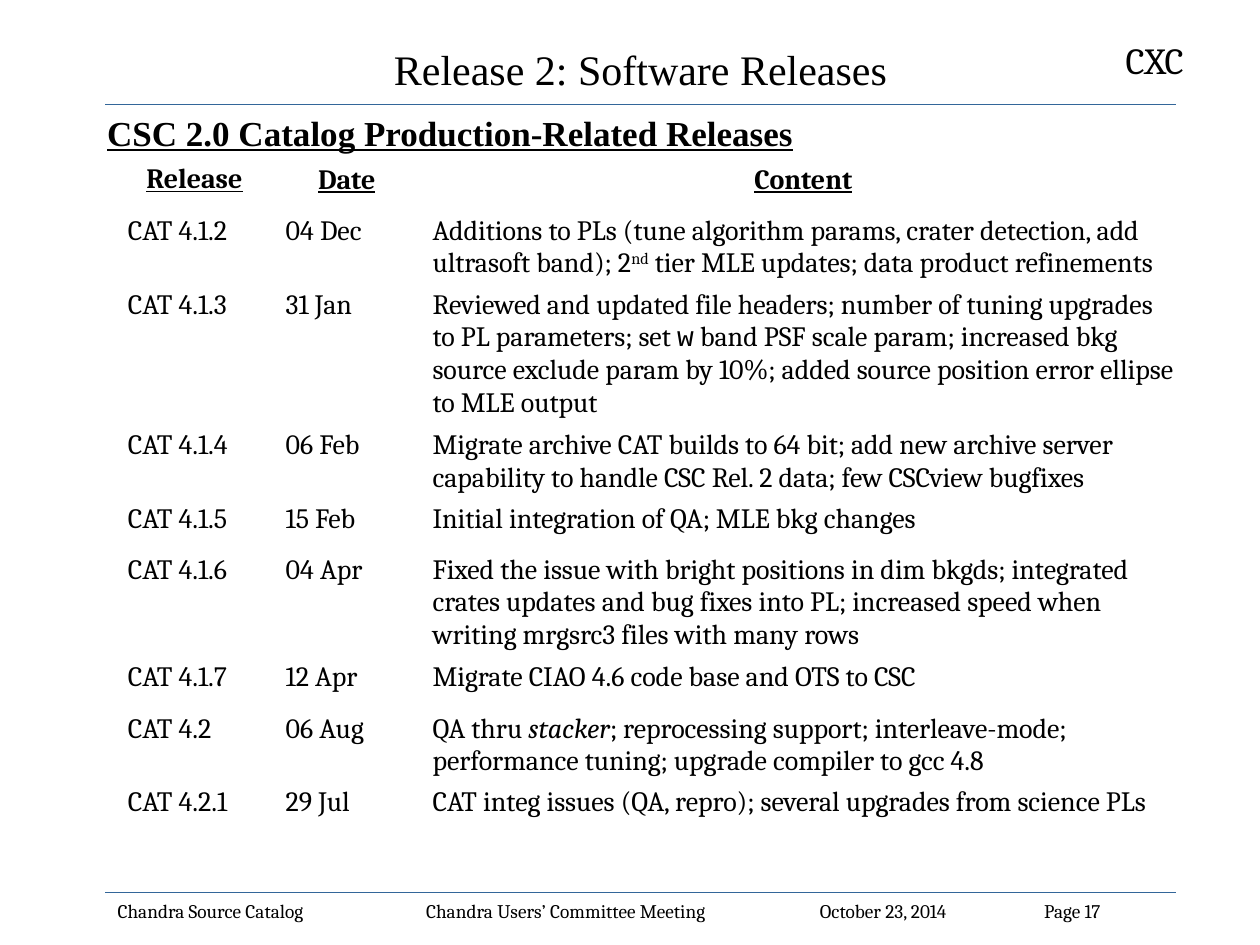
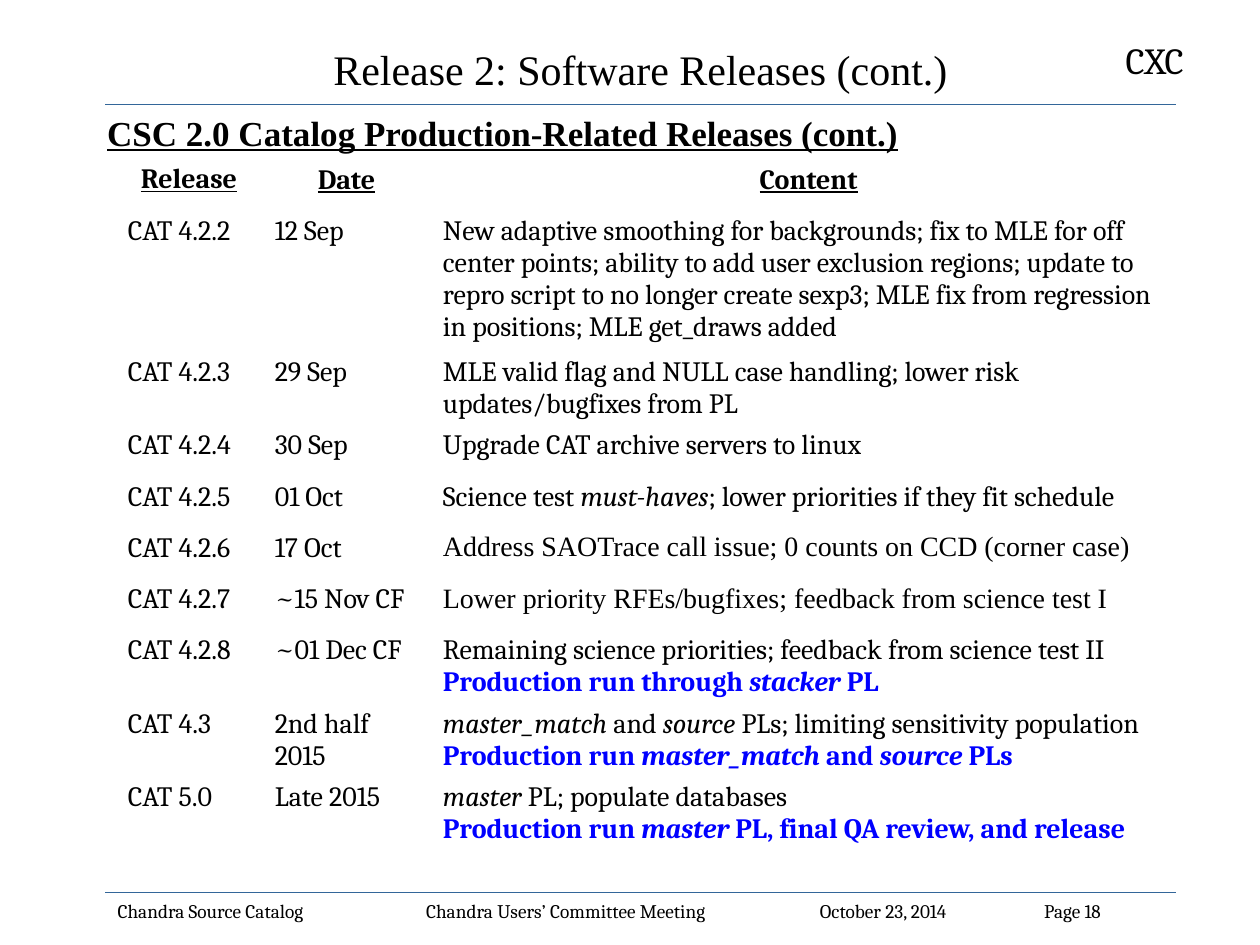
from lxml import etree
from pptx import Presentation
from pptx.dml.color import RGBColor
from pptx.enum.shapes import MSO_CONNECTOR
from pptx.enum.text import MSO_ANCHOR, PP_ALIGN
from pptx.oxml.ns import qn
from pptx.util import Cm, Pt

LEFT, CENTER = PP_ALIGN.LEFT, PP_ALIGN.CENTER
TOP, MIDDLE = MSO_ANCHOR.TOP, MSO_ANCHOR.MIDDLE
STRAIGHT = MSO_CONNECTOR.STRAIGHT

# Shared look
BLACK, WHITE, BLUE, RULE = "000000", "FFFFFF", "0000FF", "336699"
SERIF, HEADING, MONO = "Cambria", "Times New Roman", "Courier New"
INSET_X, INSET_Y = 0.25, 0.13

# Shared regions in cm: left, top, width, height
TITLE_BOX = (2.12, 0.64, 21.59, 1.48)
MARK_BOX = (22.44, 0.64, 2.03, 1.14)
SUBTITLE_BOX = (1.91, 2.12, 22.01, 1.06)
FOOTER_BOX = (2.12, 18.0, 21.59, 0.64)
TABLE_LEFT, TABLE_TOP, ROW_HEIGHT = 2.33, 3.18, 1.03
RULE_TOPS = (2.11, 17.99)
FOOTER_TABS = (6.22, 14.16, 18.68)

# Run styles used in the release tables
ITALIC = {"italic": True}
SUPER = {"baseline": 30000}
CODE = {"font": MONO, "spacing": -100}
TIMES = {"font": HEADING}
PRODUCTION = {"color": BLUE, "bold": True}
PRODUCTION_ITALIC = {**PRODUCTION, **ITALIC}
COLUMN_HEAD = {"bold": True, "underline": True}
# Column headers with their line spacing
HEADERS = (("Release", 0.95), ("Date", 1.0), ("Content", 1.0))

# Each release: name, date, lines of content; a line is a list of (text, style)
FIRST_RELEASES = [
    ("CAT 4.1.2", "04 Dec", [[
        ("Additions to PLs (tune algorithm params, crater detection, add "
         "ultrasoft band); 2", {}),
        ("nd", SUPER), (" tier MLE updates; data product refinements", {})]]),
    ("CAT 4.1.3", "31 Jan", [[
        ("Reviewed and updated file headers; number of tuning upgrades to PL "
         "parameters; set ", {}),
        ("w", CODE),
        (" band PSF scale param; increased bkg source exclude param by 10%; "
         "added source position error ellipse to MLE output", {})]]),
    ("CAT 4.1.4", "06 Feb", [[
        ("Migrate archive CAT builds to 64 bit; add new archive server "
         "capability to handle CSC Rel. 2 data; few CSCview bugfixes", {})]]),
    ("CAT 4.1.5", "15 Feb", [[
        ("Initial integration of QA; MLE bkg changes", {})]]),
    ("CAT 4.1.6", "04 Apr", [[
        ("Fixed the issue with bright positions in dim bkgds; integrated "
         "crates updates and bug fixes into PL; increased speed when writing "
         "mrgsrc3 files with many rows", {})]]),
    ("CAT 4.1.7", "12 Apr", [[
        ("Migrate CIAO 4.6 code base and OTS to CSC", {})]]),
    ("CAT 4.2", "06 Aug", [[
        ("QA thru ", {}), ("stacker", ITALIC),
        ("; reprocessing support; interleave-mode; performance tuning; "
         "upgrade compiler to gcc 4.8", {})]]),
    ("CAT 4.2.1", "29 Jul", [[
        ("CAT integ issues (QA, repro); several upgrades from science PLs",
         {})]]),
]
LATER_RELEASES = [
    ("CAT 4.2.2", "12 Sep", [[
        ("New adaptive smoothing for backgrounds; fix to MLE for off center "
         "points; ability to add user exclusion regions; update to repro "
         "script to no longer create sexp3; MLE fix from regression in "
         "positions; MLE get_draws added", {})]]),
    ("CAT 4.2.3", "29 Sep", [[
        ("MLE valid flag and NULL case handling; lower risk updates/bugfixes "
         "from PL", {})]]),
    ("CAT 4.2.4", "30 Sep", [[("Upgrade CAT archive servers to linux", {})]]),
    ("CAT 4.2.5", "01 Oct", [[
        ("Science test ", {}), ("must-haves", ITALIC),
        ("; lower priorities if they fit schedule", {})]]),
    ("CAT 4.2.6", "17 Oct", [[
        ("Address SAOTrace call issue; 0 counts on CCD (corner case)",
         TIMES)]]),
    ("CAT 4.2.7", "~15 Nov CF", [[
        ("Lower priority RFEs/bugfixes; feedback from science test I",
         TIMES)]]),
    ("CAT 4.2.8", "~01 Dec CF", [
        [("Remaining science priorities; feedback from science test II", {})],
        [("Production run through ", PRODUCTION),
         ("stacker", PRODUCTION_ITALIC), (" PL", PRODUCTION)]]),
    ("CAT 4.3", "2nd half 2015", [
        [("master_match ", ITALIC), ("and ", {}), ("source ", ITALIC),
         ("PLs; limiting sensitivity population", {})],
        [("Production run ", PRODUCTION), ("master_match", PRODUCTION_ITALIC),
         (" and ", PRODUCTION), ("source", PRODUCTION_ITALIC),
         (" PLs", PRODUCTION)]]),
    ("CAT 5.0", "Late 2015", [
        [("master ", ITALIC), ("PL; populate databases", {})],
        [("Production run ", PRODUCTION), ("master", PRODUCTION_ITALIC),
         (" PL, final QA review, and release", PRODUCTION)]]),
]


def rgb(hex_color):
    return RGBColor.from_string(hex_color)


def add_run(paragraph, text, size, font=SERIF, color=BLACK, bold=False,
            italic=False, underline=False, baseline=None, spacing=None):
    run = paragraph.add_run()
    run.text = text
    run.font.name, run.font.size = font, Pt(size)
    run.font.color.rgb = rgb(color)
    run.font.bold, run.font.italic = bold, italic
    run.font.underline = underline
    for attribute, value in (("baseline", baseline), ("spc", spacing)):
        if value is not None:
            run.font._element.set(attribute, str(value))


def add_text(slide, box, text, size, align=LEFT, anchor=TOP, wrap=True,
             tabs=(), **style):
    frame = slide.shapes.add_textbox(*map(Cm, box)).text_frame
    frame.word_wrap, frame.vertical_anchor = wrap, anchor
    paragraph = frame.paragraphs[0]
    paragraph.alignment = align
    if tabs:
        tab_list = etree.SubElement(paragraph._p.get_or_add_pPr(),
                                    qn("a:tabLst"))
        for stop in tabs:
            etree.SubElement(tab_list, qn("a:tab"), pos=str(Cm(stop)),
                             algn="l")
    add_run(paragraph, text, size, **style)


def add_rule(slide, left, top, width):
    rule = slide.shapes.add_connector(STRAIGHT, Cm(left), Cm(top),
                                      Cm(left + width), Cm(top))
    rule.line.color.rgb, rule.line.width = rgb(RULE), Pt(0.75)
    etree.SubElement(rule._element.spPr, qn("a:effectLst"))


def add_frame(slide, page):
    """Corner mark, two rules and footer."""
    add_text(slide, MARK_BOX, "CXC", 21, wrap=False)
    for top in RULE_TOPS:
        add_rule(slide, TITLE_BOX[0], top, TITLE_BOX[2])
    footer = "\t".join(("Chandra Source Catalog",
                        "Chandra Users’ Committee Meeting",
                        "October 23, 2014", f"Page {page}"))
    add_text(slide, FOOTER_BOX, footer, 11, tabs=FOOTER_TABS)


def fill_cell(cell, lines, align=LEFT, bottom=0.0, line_spacing=1.0):
    cell.fill.solid()
    cell.fill.fore_color.rgb = rgb(WHITE)
    cell.margin_left = cell.margin_right = Cm(INSET_X)
    cell.margin_top, cell.margin_bottom = Cm(INSET_Y), Cm(bottom)
    frame = cell.text_frame
    for index, line in enumerate(lines):
        paragraph = frame.add_paragraph() if index else frame.paragraphs[0]
        paragraph.alignment, paragraph.line_spacing = align, line_spacing
        for text, style in line:
            add_run(paragraph, text, 16, **style)


def add_release_table(slide, left, top, widths, releases):
    row_count = len(releases) + 1
    table = slide.shapes.add_table(
        row_count, len(widths), Cm(left), Cm(top), Cm(sum(widths)),
        Cm(ROW_HEIGHT * row_count)).table
    table.first_row = table.horz_banding = False
    for column, width in zip(table.columns, widths):
        column.width = Cm(width)
    for row in table.rows:
        row.height = Cm(ROW_HEIGHT)
    for column, (header, line_spacing) in enumerate(HEADERS):
        fill_cell(table.cell(0, column), [[(header, COLUMN_HEAD)]], CENTER,
                  INSET_Y, line_spacing)
    for row, (release, date, content) in enumerate(releases, start=1):
        columns = ([[(release, {})]], [[(date, {})]], content)
        for column, lines in enumerate(columns):
            fill_cell(table.cell(row, column), lines)


def add_release_slide(deck, page, suffix, widths, releases):
    slide = deck.slides.add_slide(deck.slide_layouts[6])
    add_frame(slide, page)
    add_text(slide, TITLE_BOX, "Release 2: Software Releases" + suffix, 24,
             CENTER, MIDDLE, font=HEADING)
    add_text(slide, SUBTITLE_BOX,
             "CSC 2.0 Catalog Production-Related Releases" + suffix, 20,
             font=HEADING, bold=True, underline=True)
    add_release_table(slide, TABLE_LEFT, TABLE_TOP, widths, releases)


def main():
    deck = Presentation()
    deck.slide_width, deck.slide_height = Cm(25.4), Cm(19.05)
    add_release_slide(deck, 17, "", (3.18, 2.96, 15.45), FIRST_RELEASES)
    add_release_slide(deck, 18, " (cont.)", (2.96, 3.39, 15.24),
                      LATER_RELEASES)
    deck.save("out.pptx")


if __name__ == "__main__":
    main()
